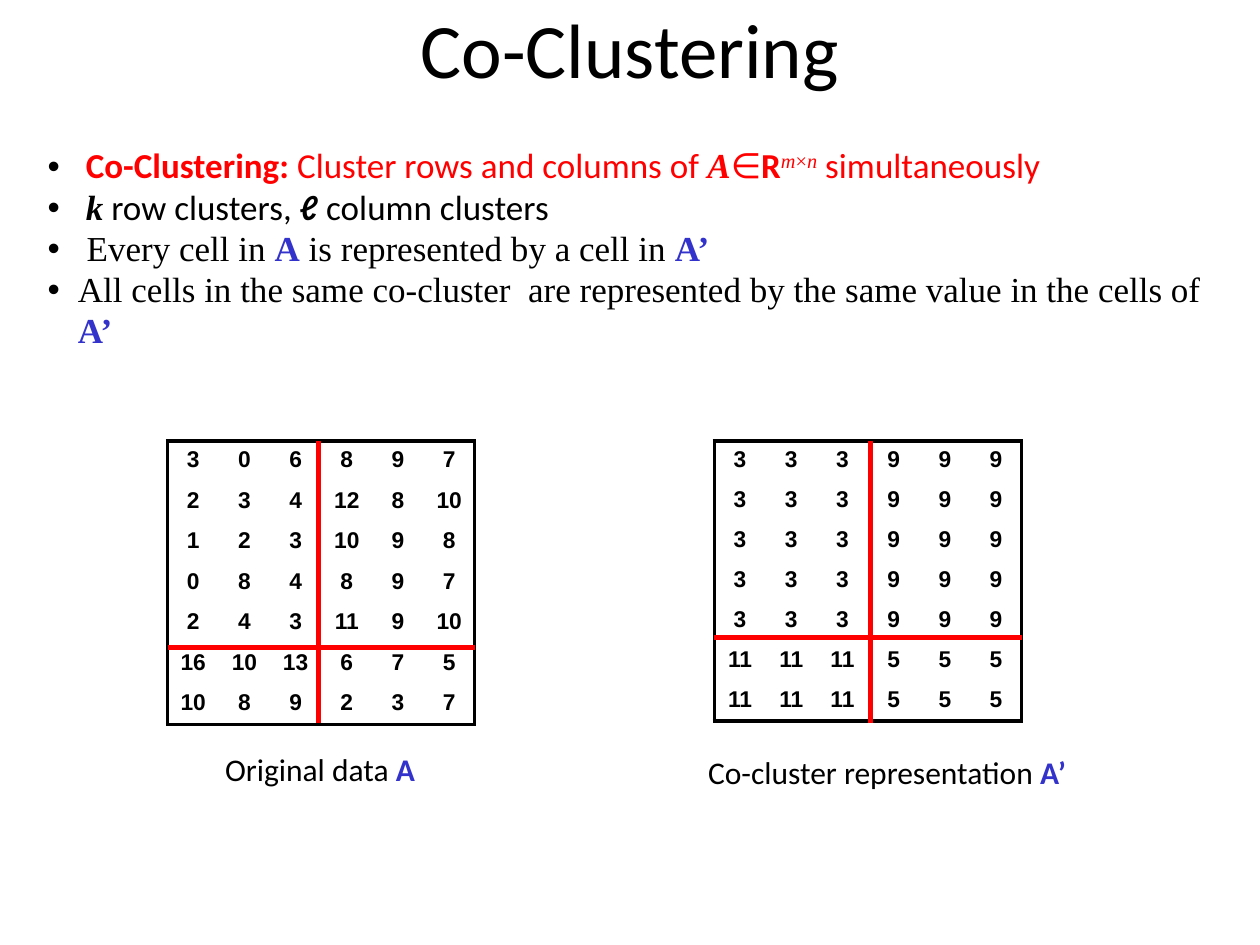
from lxml.etree import SubElement
from pptx import Presentation
from pptx.dml.color import RGBColor
from pptx.enum.shapes import MSO_CONNECTOR
from pptx.enum.text import PP_ALIGN
from pptx.oxml.ns import qn
from pptx.util import Inches, Pt

BLACK = RGBColor(0x00, 0x00, 0x00)
RED = RGBColor(0xFF, 0x00, 0x00)
BLUE = RGBColor(0x33, 0x33, 0xCC)
SERIF = "Times New Roman"


def add_text(paragraph, text, size=20, font="Calibri", color=BLACK,
             bold=False, italic=False, raised=False):
    run = paragraph.add_run()
    run.text = text
    run.font.size = Pt(size)
    run.font.name = font
    run.font.color.rgb = color
    run.font.bold = bold
    run.font.italic = italic
    if raised:
        run.font._element.set("baseline", "30000")


def add_frame(left, top, width, height):
    frame = slide.shapes.add_textbox(
        Inches(left), Inches(top), Inches(width), Inches(height)).text_frame
    frame.word_wrap = True
    return frame


prs = Presentation()
prs.slide_width = Inches(10)
prs.slide_height = Inches(7.5)
slide = prs.slides.add_slide(prs.slide_layouts[6])

title = add_frame(0.5, 0, 9, 0.93).paragraphs[0]
title.alignment = PP_ALIGN.CENTER
title.line_spacing = 0.98
add_text(title, "Co-Clustering", size=44)

red_serif = {"color": RED, "font": SERIF, "italic": True}
blue_serif = {"color": BLUE, "font": SERIF, "bold": True}
points = [
    [(" ", {}),
     ("Co-Clustering:", {"color": RED, "bold": True}),
     (" Cluster rows and columns of ", {"color": RED}),
     ("A", {**red_serif, "bold": True}),
     ("∈", {"color": RED}),
     ("R", {"color": RED, "bold": True}),
     ("m", {**red_serif, "raised": True}),
     ("×", {**red_serif, "italic": False, "raised": True}),
     ("n", {**red_serif, "raised": True}),
     (" simultaneously", {"color": RED})],
    [(" ", {}),
     ("k", {"font": SERIF, "bold": True, "italic": True}),
     (" row clusters, ", {}),
     ("ℓ ", {"bold": True, "italic": True}),
     ("column clusters", {})],
    [(" ", {"font": SERIF, "italic": True}),
     ("Every cell in ", {"font": SERIF}),
     ("A", blue_serif),
     (" is represented by a cell in ", {"font": SERIF}),
     ("A’", blue_serif)],
    [("All cells in the same co-cluster  are represented by the same value in the cells of ",
      {"font": SERIF}),
     ("A’", blue_serif)],
]
definition = add_frame(0.28, 1.11, 9.52, 1.75)
for index, runs in enumerate(points):
    point = definition.add_paragraph() if index else definition.paragraphs[0]
    point.line_spacing = 0.98
    properties = point._p.get_or_add_pPr()
    properties.set("marL", str(Inches(0.24)))
    properties.set("indent", str(-Inches(0.24)))
    bullet_color = SubElement(properties, qn("a:buClr"))
    SubElement(bullet_color, qn("a:srgbClr"), val=str(BLACK))
    SubElement(properties, qn("a:buFont"), typeface="Arial")
    SubElement(properties, qn("a:buChar"), char="•")
    for text, style in runs:
        add_text(point, text, **style)

original_data = [
    [3, 0, 6, 8, 9, 7],
    [2, 3, 4, 12, 8, 10],
    [1, 2, 3, 10, 9, 8],
    [0, 8, 4, 8, 9, 7],
    [2, 4, 3, 11, 9, 10],
    [16, 10, 13, 6, 7, 5],
    [10, 8, 9, 2, 3, 7],
]
cocluster_data = [[3] * 3 + [9] * 3] * 5 + [[11] * 3 + [5] * 3] * 2

matrices = [
    (original_data, 1.33, 2.25, 2.53, 5.14, "Original data ", "A", (1.08, 5.92, 2.92, 0.4)),
    (cocluster_data, 5.67, 2.22, 6.91, 5.06, "Co-cluster representation ", "A’",
     (5.5, 5.94, 3.08, 0.4)),
]
matrix_top, matrix_width = 3.5, 2.44
for values, left, height, split_x, split_y, caption_text, symbol, caption_box in matrices:
    last_row, last_column = len(values) - 1, len(values[0]) - 1
    matrix = slide.shapes.add_table(
        len(values), len(values[0]), Inches(left), Inches(matrix_top),
        Inches(matrix_width), Inches(height)).table
    matrix.first_row = False
    matrix.horz_banding = False
    for r, row in enumerate(values):
        for c, value in enumerate(row):
            cell = matrix.cell(r, c)
            cell.margin_left = cell.margin_right = Inches(0.02)
            entry = cell.text_frame.paragraphs[0]
            entry.alignment = PP_ALIGN.CENTER
            add_text(entry, str(value), size=13, font="Arial", bold=True)
            edges = {"a:lnL": c == 0, "a:lnR": c == last_column,
                     "a:lnT": r == 0, "a:lnB": r == last_row}
            for edge, outer in edges.items():
                border = SubElement(cell._tc.get_or_add_tcPr(), qn(edge), w=str(Pt(2.25)))
                if outer:
                    border_fill = SubElement(border, qn("a:solidFill"))
                    SubElement(border_fill, qn("a:srgbClr"), val=str(BLACK))
                else:
                    SubElement(border, qn("a:noFill"))
            cell.fill.background()

    splits = [(left, split_y, left + matrix_width, split_y),
              (split_x, matrix_top, split_x, 5.74)]
    for ends in splits:
        split = slide.shapes.add_connector(MSO_CONNECTOR.STRAIGHT, *map(Inches, ends))
        split.line.color.rgb = RED
        split.line.width = Pt(3)
        SubElement(split._element.spPr, qn("a:effectLst"))

    caption = add_frame(*caption_box).paragraphs[0]
    caption.alignment = PP_ALIGN.CENTER
    caption.line_spacing = 0.98
    add_text(caption, caption_text, size=18)
    add_text(caption, symbol, size=18, color=BLUE, bold=True)

prs.save("out.pptx")
